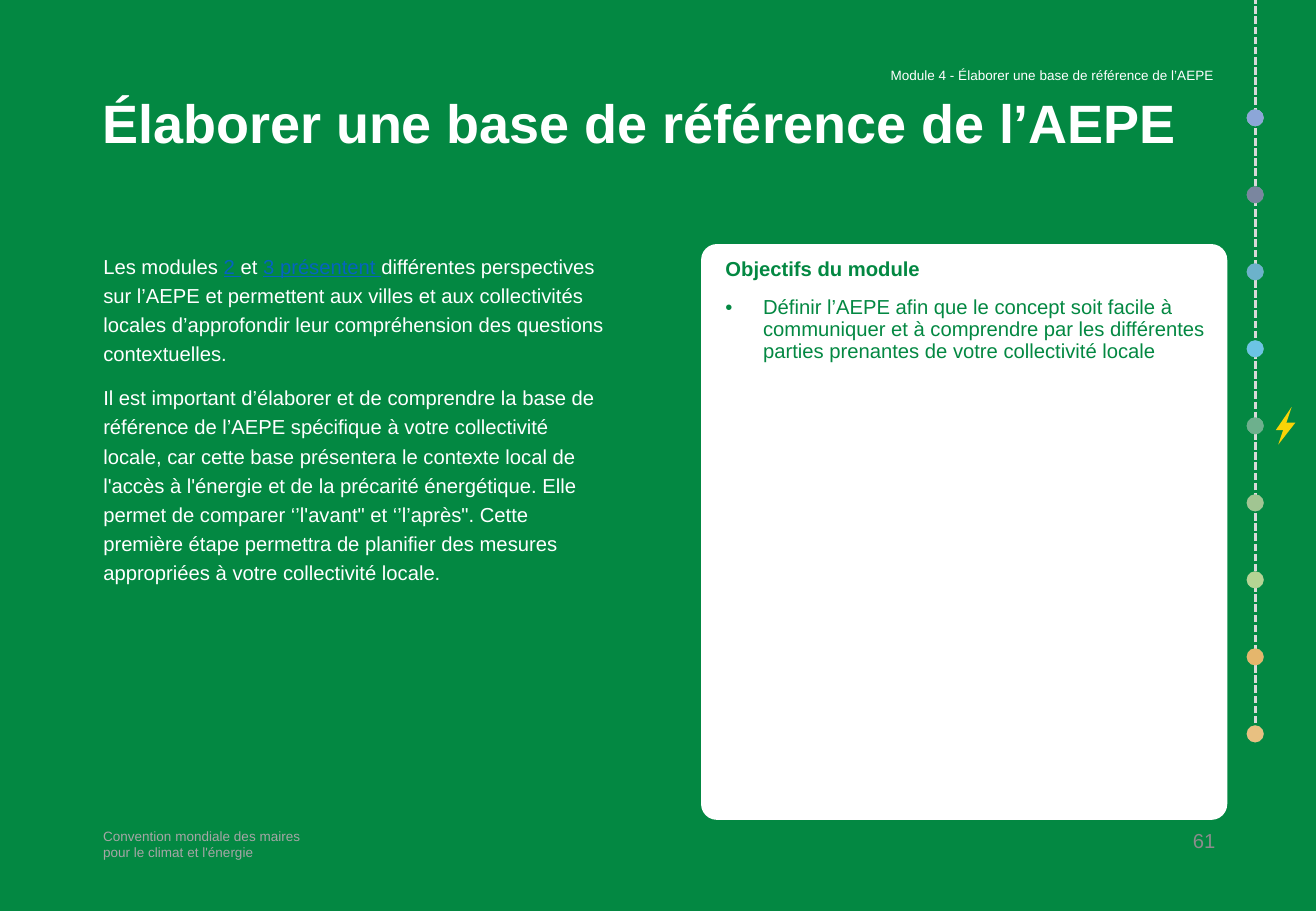
from lxml.etree import SubElement
from pptx import Presentation
from pptx.dml.color import RGBColor
from pptx.enum.dml import MSO_LINE
from pptx.enum.shapes import MSO_CONNECTOR, MSO_SHAPE
from pptx.enum.text import MSO_ANCHOR, MSO_AUTO_SIZE, PP_ALIGN
from pptx.oxml.ns import qn
from pptx.util import Inches, Pt

COLORS = {"green": "038842", "white": "FFFFFF", "link": "0563C1", "footer": "A6A6A6",
          "number": "8C8C8C", "track": "D9D9D9", "bolt": "FAD307"}

TITLE = "Élaborer une base de référence de l’AEPE"
MODULE = "Module 4 - Élaborer une base de référence de l’AEPE"
FOOTER = ["Convention mondiale des maires", "pour le climat et l'énergie"]
PAGE_NUMBER = "61"

# A paragraph is a string, or a list of (text, is_link) runs.
INTRODUCTION = [
    [("Les modules ", False), ("2 ", True), ("et ", False), ("3 présentent ", True),
     ("différentes perspectives sur l’AEPE et permettent aux villes et aux collectivités "
      "locales d’approfondir leur compréhension des questions contextuelles.", False)],
    "Il est important d’élaborer et de comprendre la base de référence de l’AEPE spécifique "
    "à votre collectivité locale, car cette base présentera le contexte local de l'accès à "
    "l'énergie et de la précarité énergétique. Elle permet de comparer ‘’l'avant\" et "
    "‘’l’après\". Cette première étape permettra de planifier des mesures appropriées à "
    "votre collectivité locale.",
]
OBJECTIVES_HEADING = "Objectifs du module"
OBJECTIVE = ("Définir l’AEPE afin que le concept soit facile à communiquer et à comprendre "
             "par les différentes parties prenantes de votre collectivité locale")

# Translucent tints laid over each grey dot, from top to bottom.
DOT_TINTS = [["C3D2EF", "4C78CE"], ["1C3567"], ["008CBE"], ["00B0F0"], ["038842"],
             ["6AB24D"], ["92D050"], ["F19500"], ["F8A92A"]]
DOT_LEFT, DOT_TOP, DOT_SIZE, DOT_STEP = 10.26, 0.9, 0.14, 0.634
TRACK_X, TRACK_BOTTOM = 10.33, 6.04
BOLT_HALVES = [[(10.57, 3.54), (10.5, 3.54), (10.63, 3.35), (10.58, 3.5)],
               [(10.58, 3.48), (10.66, 3.48), (10.52, 3.66), (10.57, 3.51)]]


def rgb(color):
    return RGBColor.from_string(COLORS.get(color, color))


def place(shape, left, top, width, height):
    shape.left, shape.top = Inches(left), Inches(top)
    shape.width, shape.height = Inches(width), Inches(height)


def prepare_frame(shape, anchor=MSO_ANCHOR.TOP, insets=(0.1, 0.05)):
    frame = shape.text_frame
    frame.word_wrap = True
    frame.auto_size = MSO_AUTO_SIZE.NONE
    frame.vertical_anchor = anchor
    frame.margin_left = frame.margin_right = Inches(insets[0])
    frame.margin_top = frame.margin_bottom = Inches(insets[1])
    return frame


def write(frame, content, *, size=12, color="white", bold=False, align=PP_ALIGN.LEFT,
          spacing=1.0, before=0, bullet=False):
    """Fill the empty first paragraph of the frame, or add a new one."""
    paragraph = frame.paragraphs[0]
    if paragraph.runs:
        paragraph = frame.add_paragraph()
    properties = paragraph._p.get_or_add_pPr()
    indent = Inches(0.31) if bullet else 0
    properties.set("marL", str(indent))
    properties.set("indent", str(-indent))
    if bullet:
        SubElement(properties, qn("a:buChar")).set("char", "•")
    else:
        SubElement(properties, qn("a:buNone"))
    paragraph.alignment = align
    paragraph.line_spacing = spacing
    paragraph.space_before, paragraph.space_after = Pt(before), Pt(0)
    runs = [(content, False)] if isinstance(content, str) else content
    for text, is_link in runs:
        run = paragraph.add_run()
        run.text = text
        font = run.font
        font.name, font.size, font.bold = "Arial", Pt(size), bold
        font.underline = is_link
        font.color.rgb = rgb("link" if is_link else color)


def add_text_box(slide, box, anchor=MSO_ANCHOR.TOP):
    return prepare_frame(slide.shapes.add_textbox(*map(Inches, box)), anchor)


def paint(shape, color, opacity=100):
    shape.shadow.inherit = False
    shape.fill.solid()
    shape.fill.fore_color.rgb = rgb(color)
    shape.line.fill.background()
    if opacity < 100:
        solid_color = shape.fill._xPr.find(qn("a:solidFill"))[0]
        SubElement(solid_color, qn("a:alpha")).set("val", str(opacity * 1000))


def add_shape(slide, kind, box, color, opacity=100):
    shape = slide.shapes.add_shape(kind, *map(Inches, box))
    paint(shape, color, opacity)
    return shape


def add_texts(slide):
    title, introduction, objectives = slide.placeholders
    place(title, 0.74, 0.75, 9.34, 1.08)
    write(prepare_frame(title), TITLE, size=32, bold=True, spacing=0.9)

    place(introduction, 0.75, 2, 4.33, 4.76)
    frame = prepare_frame(introduction)
    for content in INTRODUCTION:
        write(frame, content, spacing=1.2, before=0 if content is INTRODUCTION[0] else 9)

    card = add_shape(slide, MSO_SHAPE.ROUNDED_RECTANGLE, (5.77, 2.01, 4.33, 4.74), "white")
    card.adjustments[0] = 0.03
    title.element.addprevious(card.element)
    place(objectives, 5.77, 2.01, 4.4, 4.93)
    frame = prepare_frame(objectives, insets=(0.2, 0.12))
    write(frame, OBJECTIVES_HEADING, color="green", bold=True, spacing=0.9)
    write(frame, OBJECTIVE, color="green", spacing=0.9, before=10, bullet=True)

    write(add_text_box(slide, (6.67, 0.5, 3.42, 0.24), MSO_ANCHOR.BOTTOM), MODULE,
          size=8, align=PP_ALIGN.RIGHT, spacing=0.9)
    footer = add_text_box(slide, (0.75, 6.77, 1.83, 0.4))
    for line in FOOTER:
        write(footer, line, size=8, color="footer")
    write(add_text_box(slide, (9.58, 6.77, 0.52, 0.4)), PAGE_NUMBER,
          color="number", align=PP_ALIGN.RIGHT)


def add_progress_track(slide):
    track = slide.shapes.add_connector(MSO_CONNECTOR.STRAIGHT, Inches(TRACK_X),
                                       Inches(TRACK_BOTTOM), Inches(TRACK_X), 0)
    track.line.color.rgb = rgb("track")
    track.line.width = Pt(1.5)
    track.line.dash_style = MSO_LINE.SQUARE_DOT
    SubElement(track.element.spPr, qn("a:effectLst"))

    for index, tints in enumerate(DOT_TINTS):
        box = (DOT_LEFT, DOT_TOP + index * DOT_STEP, DOT_SIZE, DOT_SIZE)
        add_shape(slide, MSO_SHAPE.OVAL, box, "track")
        for tint in tints:
            add_shape(slide, MSO_SHAPE.OVAL, box, tint, opacity=50)

    for points in BOLT_HALVES:
        corners = [(Inches(x), Inches(y)) for x, y in points]
        builder = slide.shapes.build_freeform(*corners[0])
        builder.add_line_segments(corners[1:], close=True)
        paint(builder.convert_to_shape(), "bolt")


def main():
    presentation = Presentation()
    presentation.slide_width, presentation.slide_height = Inches(10.83), Inches(7.5)
    two_content = presentation.slide_layouts.get_by_name("Two Content")
    slide = presentation.slides.add_slide(two_content)
    slide.background.fill.solid()
    slide.background.fill.fore_color.rgb = rgb("green")
    add_texts(slide)
    add_progress_track(slide)
    presentation.save("out.pptx")


if __name__ == "__main__":
    main()
